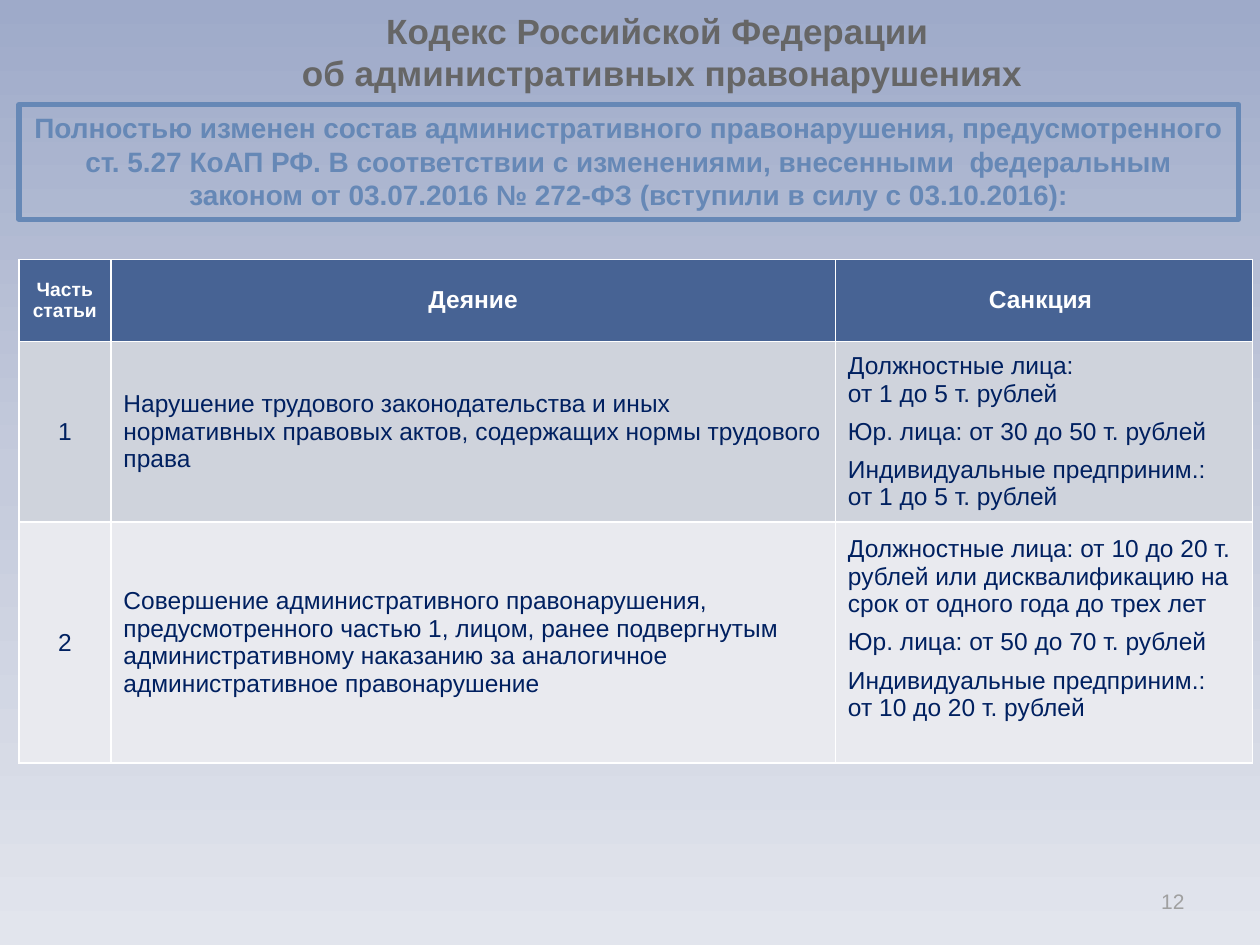
from copy import deepcopy
from dataclasses import dataclass

from pptx import Presentation
from pptx.dml.color import RGBColor
from pptx.enum.shapes import MSO_SHAPE
from pptx.enum.text import MSO_ANCHOR, PP_ALIGN
from pptx.oxml.ns import qn
from pptx.util import Inches, Pt

LEFT, CENTER, RIGHT = PP_ALIGN.LEFT, PP_ALIGN.CENTER, PP_ALIGN.RIGHT
MIDDLE = MSO_ANCHOR.MIDDLE
RECTANGLE = MSO_SHAPE.RECTANGLE


@dataclass(frozen=True)
class Theme:
    font: str = "Arial"
    background: tuple = ("9EAAC9", "C5CBDC", "E2E5ED")
    title: str = "666666"
    accent: str = "6688B6"
    header_fill: str = "476394"
    header_text: str = "FFFFFF"
    row_fills: tuple = ("CFD3DC", "E9EAEF")
    body: str = "002060"
    number: str = "A0A0A0"
    title_size: int = 20
    notice_size: int = 16
    table_size: int = 14
    part_size: int = 11
    number_size: int = 12


THEME = Theme()

TITLE = "Кодекс Российской Федерации \vоб административных правонарушениях"
NOTICE = (
    "Полностью изменен состав административного правонарушения, предусмотренного "
    "ст. 5.27 КоАП РФ. В соответствии с изменениями, внесенными  федеральным "
    "законом от 03.07.2016 № 272-ФЗ (вступили в силу с 03.10.2016):"
)
HEADERS = ("Часть статьи", "Деяние", "Санкция ")
OFFENCES = (
    (
        "1",
        "Нарушение трудового законодательства и иных нормативных правовых актов, "
        "содержащих нормы трудового права",
        "Должностные лица: \vот 1 до 5 т. рублей\n"
        "Юр. лица: от 30 до 50 т. рублей\n"
        "Индивидуальные предприним.: \vот 1 до 5 т. рублей",
    ),
    (
        "2",
        "Совершение административного правонарушения, предусмотренного частью 1, "
        "лицом, ранее подвергнутым административному наказанию за аналогичное "
        "административное правонарушение",
        "Должностные лица: от 10 до 20 т. рублей или дисквалификацию на срок "
        "от одного года до трех лет\n"
        "Юр. лица: от 50 до 70 т. рублей\n"
        "Индивидуальные предприним.: \vот 10 до 20 т. рублей",
    ),
)
COLUMN_WIDTHS = (0.73, 5.75, 3.31)
ROW_HEIGHTS = (0.65, 1.43, 1.91)


def rgb(value):
    return RGBColor.from_string(value)


def write(frame, text, size, color, bold=False, align=LEFT):
    """Fill a text frame; 6 pt separate its paragraphs."""
    frame.text = text
    frame.word_wrap = True
    for paragraph in frame.paragraphs:
        paragraph.alignment = align
        if paragraph is not frame.paragraphs[-1]:
            paragraph.space_after = Pt(6)
        for run in paragraph.runs:
            run.font.color.rgb = rgb(color)
            formats = {"name": THEME.font, "size": Pt(size), "bold": bold}
            for key, value in formats.items():
                setattr(run.font, key, value)
    for paragraph in frame.paragraphs[:-1]:
        paragraph.space_after = Pt(6)


def paint_background(slide):
    fill = slide.background.fill
    fill.gradient()
    fill.gradient_angle = 270
    stop_list = next(slide.element.iter(qn("a:gsLst")))
    stop_list.insert(1, deepcopy(stop_list[0]))
    for index, (stop, color) in enumerate(zip(fill.gradient_stops, THEME.background)):
        stop.position = index / 2
        stop.color.rgb = rgb(color)


def add_label(slide, box, text, size, color, bold, align):
    frame = slide.shapes.add_textbox(*box).text_frame
    write(frame, text, size, color, bold, align)
    frame.vertical_anchor = MIDDLE


def add_notice(slide, box):
    notice = slide.shapes.add_shape(RECTANGLE, *box)
    notice.shadow.inherit = False
    notice.fill.background()
    notice.line.color.rgb = rgb(THEME.accent)
    notice.line.width = Pt(3)
    write(notice.text_frame, NOTICE, THEME.notice_size, THEME.accent, True, CENTER)
    notice.text_frame.vertical_anchor = MSO_ANCHOR.TOP


def fill_cell(cell, text, fill, size, color, bold, align):
    cell.fill.solid()
    cell.fill.fore_color.rgb = rgb(fill)
    cell.vertical_anchor = MIDDLE
    write(cell.text_frame, text, size, color, bold, align)


def add_offence_table(slide, box):
    rows = (HEADERS, *OFFENCES)
    table = slide.shapes.add_table(len(rows), len(HEADERS), *box).table
    for column, width in zip(table.columns, COLUMN_WIDTHS):
        column.width = Inches(width)
    for row, height in zip(table.rows, ROW_HEIGHTS):
        row.height = Inches(height)

    for index, header in enumerate(HEADERS):
        size = THEME.table_size if index else THEME.part_size
        fill_cell(table.cell(0, index), header, THEME.header_fill,
                  size, THEME.header_text, True, CENTER)
    for row, (offence, fill) in enumerate(zip(OFFENCES, THEME.row_fills), start=1):
        for column, text in enumerate(offence):
            fill_cell(table.cell(row, column), text, fill, THEME.table_size,
                      THEME.body, False, LEFT if column else CENTER)
    # The last sanction sits one line above the middle of its row.
    table.cell(len(OFFENCES), 2).margin_bottom = Inches(0.27)


def inches(*lengths):
    return tuple(Inches(length) for length in lengths)


def main():
    presentation = Presentation()
    presentation.slide_width, presentation.slide_height = inches(10, 7.5)
    slide = presentation.slides.add_slide(presentation.slide_layouts[6])

    paint_background(slide)
    add_label(slide, inches(1.15, -0.01, 8.21, 0.84), TITLE,
              THEME.title_size, THEME.title, True, CENTER)
    add_notice(slide, inches(0.15, 0.83, 9.68, 0.91))
    add_offence_table(slide, inches(0.15, 2.06, sum(COLUMN_WIDTHS), sum(ROW_HEIGHTS)))
    add_label(slide, inches(7.17, 6.95, 2.33, 0.4), "12",
              THEME.number_size, THEME.number, False, RIGHT)

    presentation.save("out.pptx")


if __name__ == "__main__":
    main()
